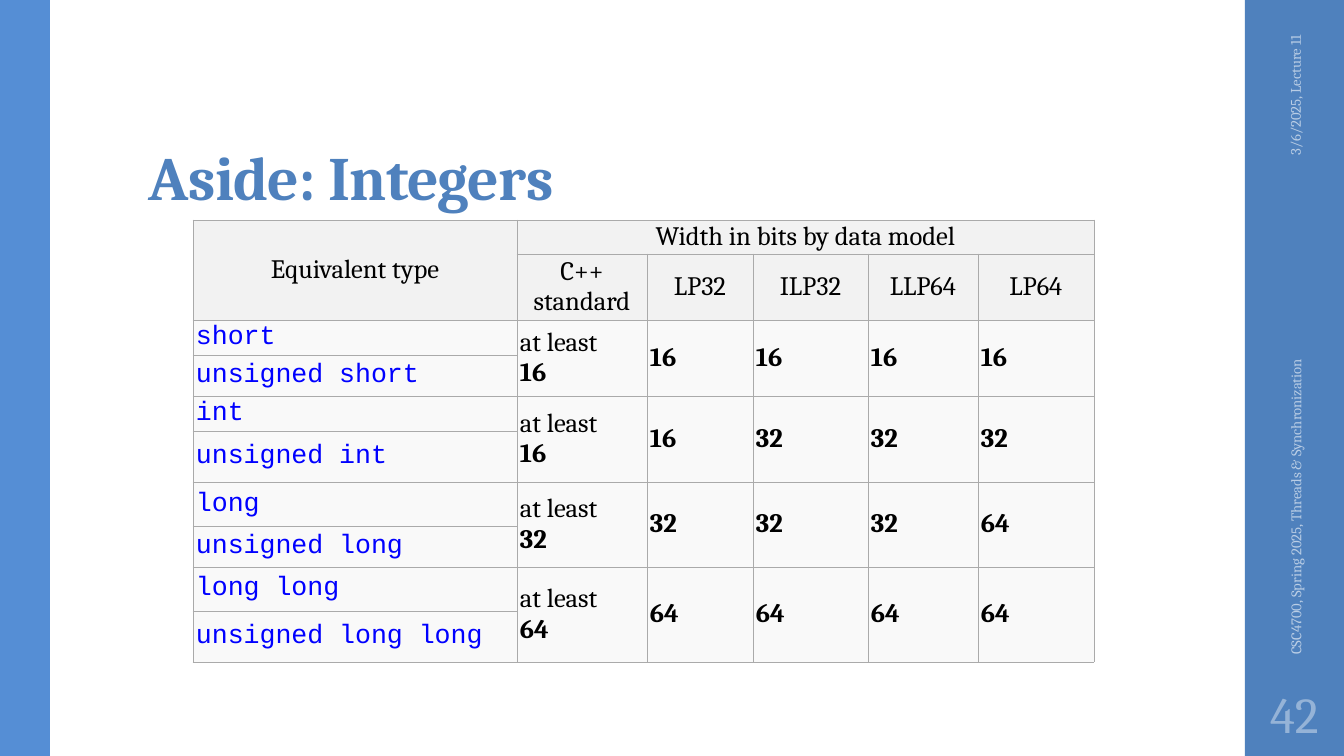
"""Build the slide on integer widths by data model."""
from itertools import product

from lxml import etree
from pptx import Presentation
from pptx.dml.color import RGBColor
from pptx.enum.shapes import MSO_SHAPE
from pptx.enum.text import MSO_ANCHOR, PP_ALIGN
from pptx.oxml.ns import qn
from pptx.util import Pt

RECT = MSO_SHAPE.RECTANGLE
MIDDLE, BOTTOM = MSO_ANCHOR.MIDDLE, MSO_ANCHOR.BOTTOM
LEFT, CENTER, RIGHT = PP_ALIGN.LEFT, PP_ALIGN.CENTER, PP_ALIGN.RIGHT

TITLE = "Aside: Integers"
NUMBER = "42"
COURSE = "CSC4700, Spring 2025, Threads & Synchronization"
DATE = "3/6/2025, Lecture 11"
CORNER, SPAN = "Equivalent type", "Width in bits by data model"
MODELS = ["C++ standard", "LP32", "ILP32", "LLP64", "LP64"]
TYPES = [
    ("short", ["16", "16", "16", "16", "16"]),
    ("int", ["16", "16", "32", "32", "32"]),
    ("long", ["32", "32", "32", "32", "64"]),
    ("long long", ["64", "64", "64", "64", "64"]),
]
LEAST, SIGN = "at least", "unsigned "

SIZE = (1344, 756)
BARS = [((1245, 0, 99, 756), "band"), ((0, 0, 50, 756), "edge")]
GRID = (193, 220)
COLS = [324, 130, 106, 115, 110, 116]
ROWS = [34, 66, 35, 41, 35, 51, 44, 41, 44, 51]


class Theme:
    """Fonts, type sizes and colours."""
    font, code = "Cambria", "Courier New"
    title, cell, number, note = 44, 19, 36, 10.5
    band, edge, ink, type = "4F81BD", "558ED5", "000000", "0000FF"
    page, label = "95B3D7", "B9CDE5"
    head, body, rule = "F2F2F2", "F9F9F9", "AAAAAA"


def px(n):
    return round(n * 914400 / 100.8)


def paint(fill, color):
    fill.solid()
    fill.fore_color.rgb = RGBColor.from_string(color)


def add_run(para, text, size, color, bold=False, font=Theme.font):
    run = para.add_run()
    run.text = text
    face = run.font
    face.name, face.size, face.bold = font, Pt(size), bold
    face.color.rgb = RGBColor.from_string(color)
    return run


def add_bar(slide, box, color):
    bar = slide.shapes.add_shape(RECT, *map(px, box))
    bar.shadow.inherit = False
    paint(bar.fill, color)
    bar.line.fill.background()


def add_text(slide, box, text, size, color, align=LEFT, anchor=MIDDLE,
             inset=(10, 5, 10, 5), turn=0, bold=False):
    shape = slide.shapes.add_textbox(*map(px, box))
    shape.rotation = turn
    frame = shape.text_frame
    frame.word_wrap, frame.vertical_anchor = True, anchor
    (frame.margin_left, frame.margin_top,
     frame.margin_right, frame.margin_bottom) = map(px, inset)
    para = frame.paragraphs[0]
    para.alignment = align
    return para, add_run(para, text, size, color, bold)


def style_cell(cell, color):
    cell.margin_left = cell.margin_right = px(3)
    cell.margin_top = cell.margin_bottom = px(1)
    cell.vertical_anchor = MIDDLE
    props = cell._tc.get_or_add_tcPr()
    for side in ("a:lnL", "a:lnR", "a:lnT", "a:lnB"):
        line = etree.SubElement(props, qn(side), w=str(Pt(0.5)))
        fill = etree.SubElement(line, qn("a:solidFill"))
        etree.SubElement(fill, qn("a:srgbClr"), val=Theme.rule)
    paint(cell.fill, color)


def add_head(cell, text):
    para = cell.text_frame.paragraphs[0]
    para.alignment = CENTER
    add_run(para, text, Theme.cell, Theme.ink)


def add_grid(slide):
    box = (*GRID, sum(COLS), sum(ROWS))
    table = slide.shapes.add_table(len(ROWS), len(COLS), *map(px, box)).table
    table.first_row = table.horz_banding = False
    for col, width in zip(table.columns, COLS):
        col.width = px(width)
    for row, height in zip(table.rows, ROWS):
        row.height = px(height)
    for r, c in product(range(len(ROWS)), range(len(COLS))):
        style_cell(table.cell(r, c), Theme.head if r < 2 else Theme.body)

    table.cell(0, 0).merge(table.cell(1, 0))
    table.cell(0, 1).merge(table.cell(0, len(MODELS)))
    add_head(table.cell(0, 0), CORNER)
    add_head(table.cell(0, 1), SPAN)
    for c, model in enumerate(MODELS, 1):
        add_head(table.cell(1, c), model)

    for i, (name, widths) in enumerate(TYPES):
        top = 2 + 2 * i
        for r, text in enumerate((name, SIGN + name), top):
            para = table.cell(r, 0).text_frame.paragraphs[0]
            add_run(para, text, Theme.cell, Theme.type, font=Theme.code)
        for c, width in enumerate(widths, 1):
            cell = table.cell(top, c)
            cell.merge(table.cell(top + 1, c))
            para = cell.text_frame.paragraphs[0]
            if c == 1:
                add_run(para, LEAST, Theme.cell, Theme.ink)
                para.add_line_break()
            add_run(para, width, Theme.cell, Theme.ink, bold=True)


def main():
    deck = Presentation()
    deck.slide_width, deck.slide_height = map(px, SIZE)
    slide = deck.slides.add_slide(deck.slide_layouts[6])
    for box, color in BARS:
        add_bar(slide, box, getattr(Theme, color))
    para, run = add_text(slide, (139, 32, 1068, 187), TITLE, Theme.title,
                         Theme.band, anchor=BOTTOM, inset=(10, 3, 10, 5),
                         bold=True)
    para.line_spacing = 0.9
    run.font._element.set("spc", "-50")
    add_grid(slide)
    add_text(slide, (1245, 680, 99, 66), NUMBER, Theme.number, Theme.page,
             CENTER, inset=(5, 5, 5, 5))
    add_text(slide, (1098, 447, 395, 40), COURSE, Theme.note, Theme.label,
             turn=270)
    add_text(slide, (1190, 110, 210, 40), DATE, Theme.note, Theme.label,
             RIGHT, turn=270)
    deck.save("out.pptx")


if __name__ == "__main__":
    main()
